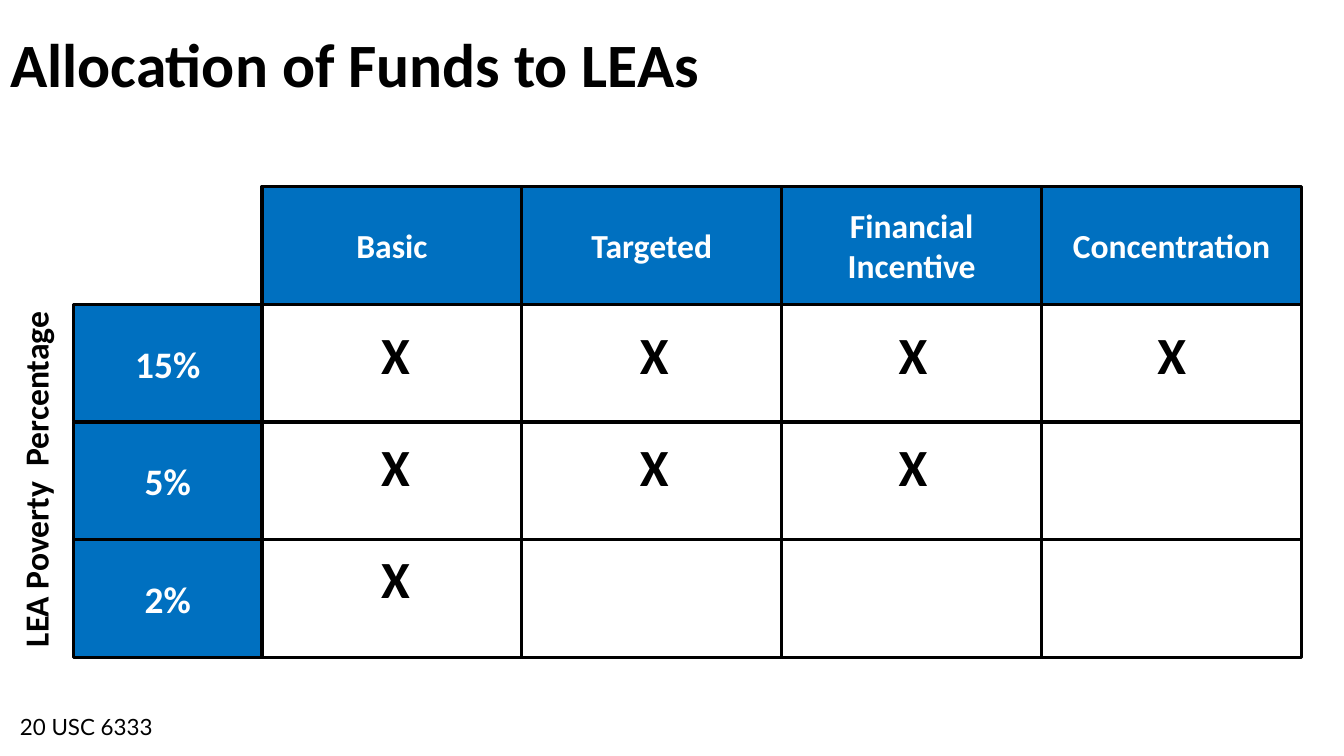
from pptx import Presentation
from pptx.dml.color import RGBColor
from pptx.enum.shapes import MSO_SHAPE
from pptx.enum.text import MSO_ANCHOR, PP_ALIGN
from pptx.util import Pt

COLORS = {"blue": "0070C0", "white": "FFFFFF", "black": "000000"}
GRANTS = ["Basic", "Targeted", "Financial Incentive", "Concentration"]
POVERTY_LEVELS = [("15%", 4), ("5%", 3), ("2%", 1)]

GRID_LEFT, GRID_TOP = 187.2, 133.2
COLUMN_WIDTH, ROW_HEIGHT = 185.6, 84.1
LABEL_LEFT, LABEL_WIDTH = 52.6, 134.6
MARK_LEFT, MARK_TOP = 250.6, 226.8
MARK_COLUMN_STEP, MARK_ROW_STEP = 184.8, 80


def write_text(shape, text, size, color="black", bold=True, font="Calibri",
               align=PP_ALIGN.LEFT, anchor=MSO_ANCHOR.TOP):
    frame = shape.text_frame
    frame.word_wrap = True
    frame.vertical_anchor = anchor
    paragraph = frame.paragraphs[0]
    paragraph.alignment = align
    run = paragraph.add_run()
    run.text = text
    run.font.name = font
    run.font.size = Pt(size)
    run.font.bold = bold
    run.font.color.rgb = RGBColor.from_string(COLORS[color])


def add_cell(left, top, width, fill, text="", size=24):
    cell = slide.shapes.add_shape(
        MSO_SHAPE.RECTANGLE, Pt(left), Pt(top), Pt(width), Pt(ROW_HEIGHT))
    cell.shadow.inherit = False
    cell.fill.solid()
    cell.fill.fore_color.rgb = RGBColor.from_string(COLORS[fill])
    cell.line.color.rgb = RGBColor.from_string(COLORS["black"])
    cell.line.width = Pt(2.25)
    if text:
        write_text(cell, text, size, color="white",
                   align=PP_ALIGN.CENTER, anchor=MSO_ANCHOR.MIDDLE)


presentation = Presentation()
presentation.slide_width = Pt(960)
presentation.slide_height = Pt(540)
slide = presentation.slides.add_slide(presentation.slide_layouts[5])

title = slide.shapes.title
title.left, title.top, title.width, title.height = Pt(0), Pt(0), Pt(960), Pt(96)
write_text(title, "Allocation of Funds to LEAs", 44, anchor=MSO_ANCHOR.MIDDLE)
title.text_frame.paragraphs[0].line_spacing = 0.9

for column, grant in enumerate(GRANTS):
    add_cell(GRID_LEFT + column * COLUMN_WIDTH, GRID_TOP, COLUMN_WIDTH, "blue", grant)

for row, (level, mark_count) in enumerate(POVERTY_LEVELS):
    top = GRID_TOP + (row + 1) * ROW_HEIGHT
    add_cell(LABEL_LEFT, top, LABEL_WIDTH, "blue", level, 26.7)
    for column in range(len(GRANTS)):
        add_cell(GRID_LEFT + column * COLUMN_WIDTH, top, COLUMN_WIDTH, "white")
    for column in range(mark_count):
        mark = slide.shapes.add_textbox(
            Pt(MARK_LEFT + column * MARK_COLUMN_STEP),
            Pt(MARK_TOP + row * MARK_ROW_STEP), Pt(64), Pt(52.6))
        write_text(mark, "X", 37.3, align=PP_ALIGN.CENTER)

axis_label = slide.shapes.add_textbox(Pt(7.2), Pt(140.4), Pt(43.9), Pt(329))
write_text(axis_label, "LEA Poverty  Percentage", 24)
axis_label.text_frame._txBody.bodyPr.set("vert", "vert270")

citation = slide.shapes.add_textbox(Pt(7.2), Pt(506.2), Pt(307.4), Pt(26.6))
write_text(citation, "20 USC 6333", 16, bold=False, font="Lato")

presentation.save("out.pptx")
